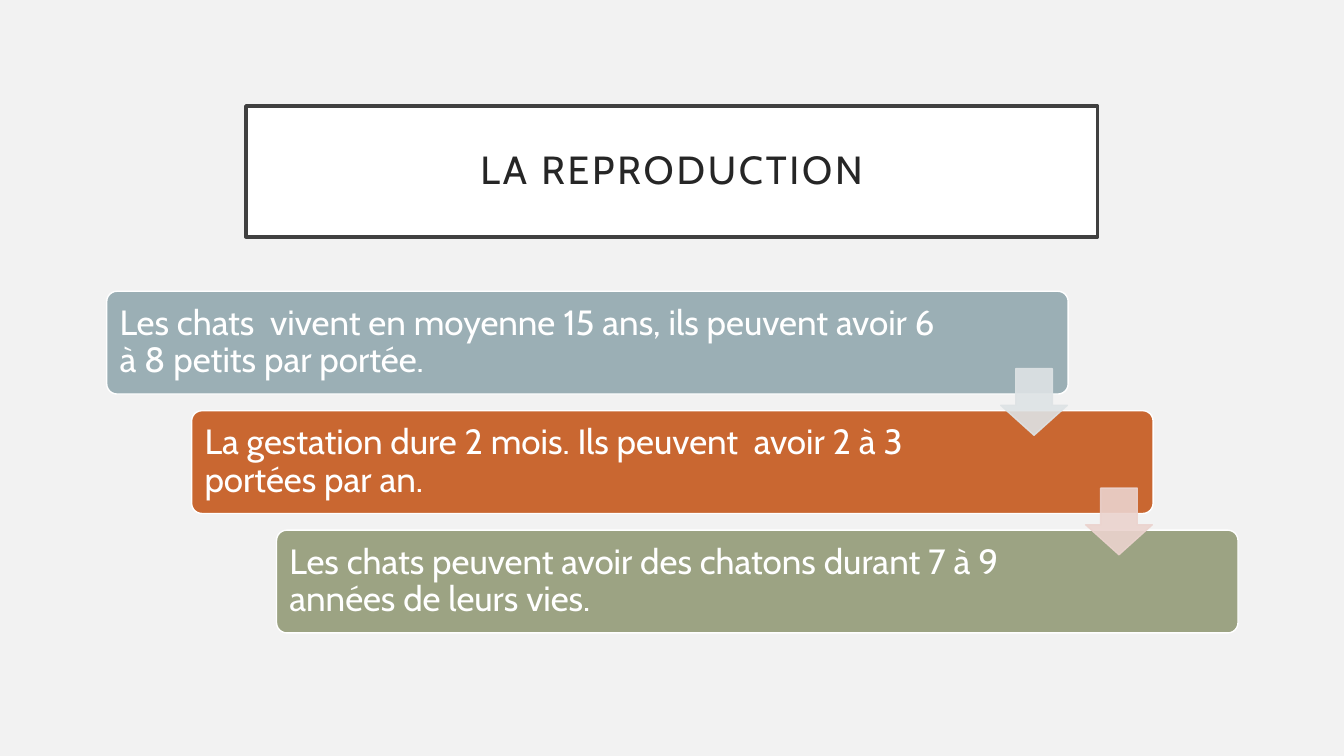
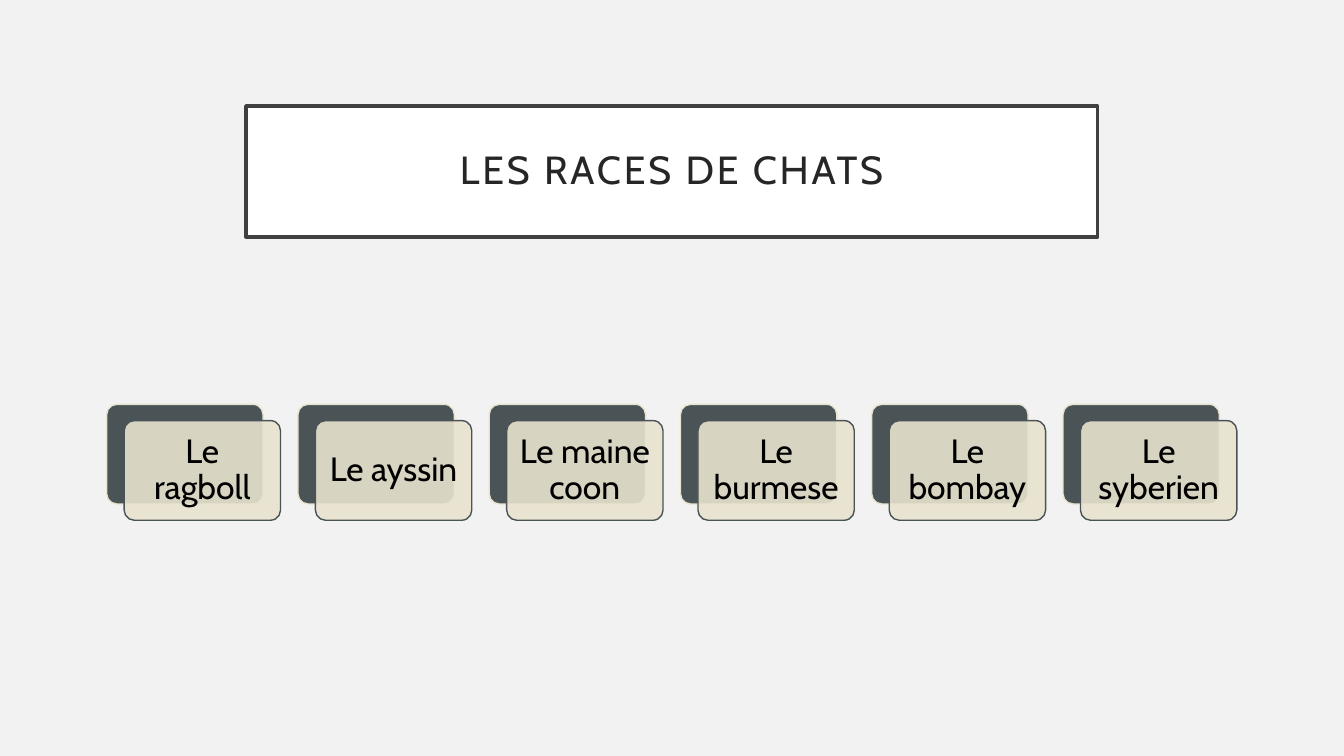
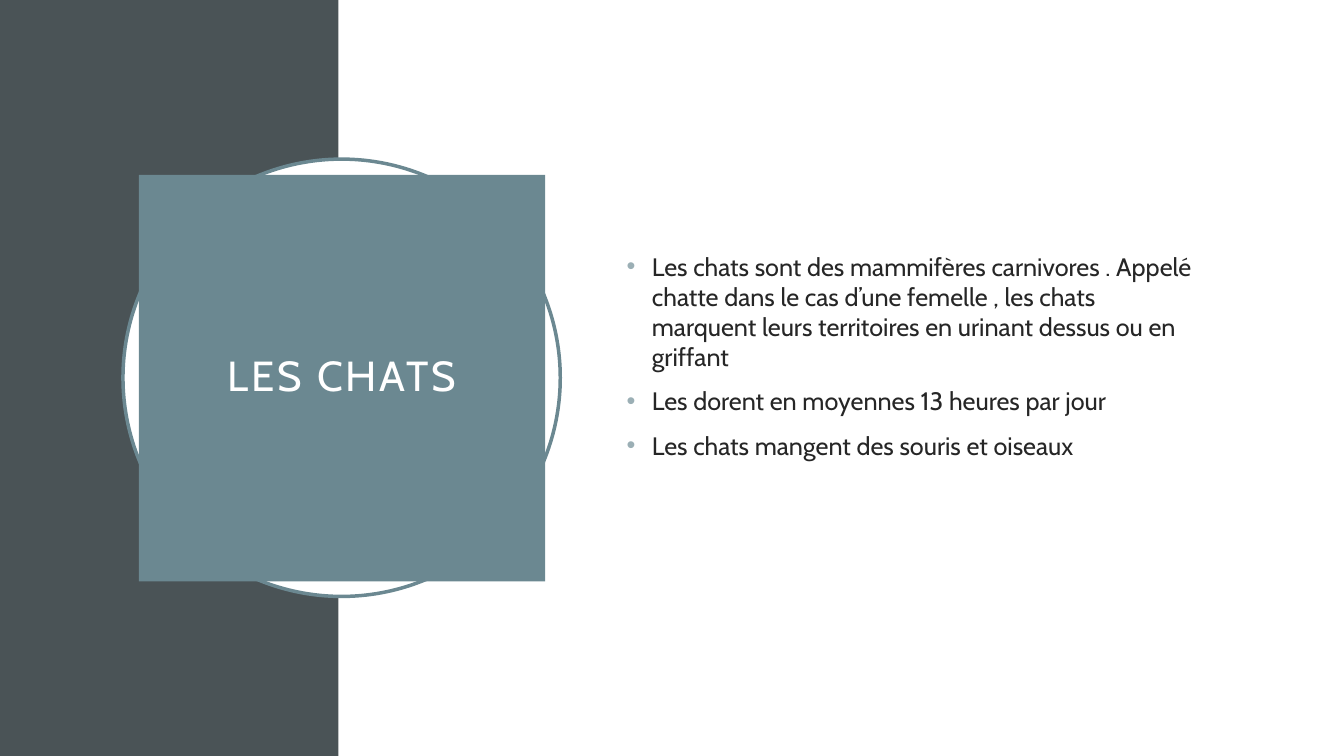
from lxml.etree import SubElement
from pptx import Presentation
from pptx.dml.color import RGBColor
from pptx.enum.shapes import MSO_SHAPE as Preset
from pptx.enum.text import MSO_ANCHOR as Anchor, PP_ALIGN as Align
from pptx.oxml.ns import qn
from pptx.util import Cm, Pt

WHITE = RGBColor(0xFF, 0xFF, 0xFF)
BLACK = RGBColor(0x00, 0x00, 0x00)
PALE_GREY = RGBColor(0xF2, 0xF2, 0xF2)
FRAME_GREY = RGBColor(0x40, 0x40, 0x40)
INK = RGBColor(0x26, 0x26, 0x26)
SLATE = RGBColor(0x4A, 0x53, 0x56)
TEAL = RGBColor(0x6B, 0x88, 0x91)
MIST = RGBColor(0x9B, 0xAF, 0xB5)
RUST = RGBColor(0xC9, 0x67, 0x31)
SAGE = RGBColor(0x9C, 0xA3, 0x83)
CREAM = RGBColor(0xE8, 0xE3, 0xCE)
PALE_MIST = RGBColor(0xDE, 0xE3, 0xE5)
PALE_RUST = RGBColor(0xEB, 0xD3, 0xCE)

FONT = "Cabin"
WIDTH, HEIGHT = 33.87, 19.05


def write(shape, *texts, size, colour, align=Align.LEFT, insets=(0.25,) * 4,
          line_spacing=0.9, space_before=0, tracking=0, bullet=None):
    frame = shape.text_frame
    frame.word_wrap = True
    frame.vertical_anchor = Anchor.MIDDLE
    (frame.margin_left, frame.margin_top,
     frame.margin_right, frame.margin_bottom) = map(Cm, insets)
    for index, text in enumerate(texts):
        para = frame.add_paragraph() if index else frame.paragraphs[0]
        para.alignment = align
        para.line_spacing = line_spacing
        para.space_before = Pt(space_before)
        span = para.add_run()
        span.text = text
        span.font.name = FONT
        span.font.size = Pt(size)
        span.font.color.rgb = colour
        if tracking:
            span._r.get_or_add_rPr().set("spc", str(tracking * 100))
        if bullet:
            add_bullet(para, bullet)


def add_bullet(para, colour):
    properties = para._p.get_or_add_pPr()
    properties.set("marL", str(Cm(0.64)))
    properties.set("indent", str(-Cm(0.64)))
    paint = SubElement(properties, qn("a:buClr"))
    SubElement(paint, qn("a:srgbClr")).set("val", str(colour))
    SubElement(properties, qn("a:buFont")).set("typeface", "Arial")
    SubElement(properties, qn("a:buChar")).set("char", "•")


def set_alpha(shape, route, percent):
    for colour in shape._element.spPr.findall("/".join(map(qn, route))):
        SubElement(colour, qn("a:alpha")).set("val", str(percent * 1000))


class SlideBuilder:
    def __init__(self):
        self.deck = Presentation()
        self.deck.slide_width = Cm(WIDTH)
        self.deck.slide_height = Cm(HEIGHT)
        self.page = None

    def new_page(self, background):
        self.page = self.deck.slides.add_slide(self.deck.slide_layouts[6])
        self.page.background.fill.solid()
        self.page.background.fill.fore_color.rgb = background

    def shape(self, preset, left, top, width, height, fill, line=None,
              line_width=1.0, adjustments=(), alpha=None, line_alpha=None):
        shape = self.page.shapes.add_shape(
            preset, Cm(left), Cm(top), Cm(width), Cm(height))
        shape.shadow.inherit = False
        for index, value in enumerate(adjustments):
            shape.adjustments[index] = value
        shape.fill.solid()
        shape.fill.fore_color.rgb = fill
        if line is None:
            shape.line.fill.background()
        else:
            shape.line.color.rgb = line
            shape.line.width = Pt(line_width)
        if alpha:
            set_alpha(shape, ("a:solidFill", "a:srgbClr"), alpha)
        if line_alpha:
            set_alpha(shape, ("a:ln", "a:solidFill", "a:srgbClr"), line_alpha)
        return shape

    def rounded(self, left, top, width, height, fill, line, **style):
        return self.shape(Preset.ROUNDED_RECTANGLE, left, top, width, height,
                          fill, line, adjustments=(0.1,), **style)

    def arrow(self, left, top, colour):
        self.shape(Preset.DOWN_ARROW, left, top, 1.68, 1.68, colour, colour,
                   adjustments=(0.55, 0.45), alpha=90, line_alpha=90)

    def title(self, text, left=6.2, top=2.67, width=21.46, height=3.3,
              fill=WHITE, line=FRAME_GREY, size=28, colour=INK):
        box = self.shape(Preset.RECTANGLE, left, top, width, height,
                         fill, line, line_width=2.5)
        write(box, text, size=size, colour=colour, align=Align.CENTER,
              insets=(0.51,) * 4, tracking=2)

    def bullets(self, left, top, width, height, texts):
        box = self.page.shapes.add_textbox(
            Cm(left), Cm(top), Cm(width), Cm(height))
        write(box, *texts, size=18, colour=INK, insets=(0.25, 0.13, 0.25, 1.24),
              line_spacing=1.0, space_before=10, bullet=MIST)


def build_reproduction(builder):
    builder.new_page(PALE_GREY)
    builder.title("LA REPRODUCTION")
    step_x, step_y = 2.14, 3.01
    steps = (
        ("Les chats  vivent en moyenne 15 ans, ils peuvent avoir 6 à 8 petits par portée.", MIST, 2.9),
        ("La gestation dure 2 mois. Ils peuvent  avoir 2 à 3 portées par an.", RUST, 4.09),
        ("Les chats peuvent avoir des chatons durant 7 à 9 années de leurs vies.", SAGE, 4.09),
    )
    for index, (text, fill, right_inset) in enumerate(steps):
        box = builder.rounded(2.69 + index * step_x, 7.34 + index * step_y,
                              24.23, 2.59, fill, WHITE)
        write(box, text, size=25, colour=WHITE,
              insets=(0.25, 0.25, right_inset, 0.25))
    for index, colour in enumerate((PALE_MIST, PALE_RUST)):
        builder.arrow(25.22 + index * step_x, 9.29 + index * step_y, colour)


def build_breeds(builder):
    builder.new_page(PALE_GREY)
    builder.title("LES RACES DE CHATS")
    breeds = ("Le ragboll", "Le ayssin", "Le maine coon",
              "Le burmese", "Le bombay", "Le syberien")
    width, height, pitch, top = 3.94, 2.51, 4.82, 10.19
    for index, breed in enumerate(breeds):
        left = 2.69 + index * pitch
        builder.rounded(left, top, width, height, SLATE, CREAM)
        card = builder.rounded(left + 0.44, top + 0.41, width, height,
                               CREAM, SLATE, alpha=90)
        write(card, breed, size=24, colour=BLACK, align=Align.CENTER,
              insets=(0.22,) * 4)


def build_cats(builder):
    builder.new_page(WHITE)
    builder.shape(Preset.RECTANGLE, 0, 0, 8.53, HEIGHT, SLATE)
    builder.shape(Preset.OVAL, 3.1, 4.01, 11.02, 11.02, WHITE, TEAL,
                  line_width=2.5)
    builder.title("LES CHATS", 3.5, 4.41, 10.24, 10.24, fill=TEAL, line=None,
                  size=30, colour=WHITE)
    builder.bullets(15.54, 3.89, 14.78, 11.25, (
        "Les chats sont des mammifères carnivores . Appelé chatte dans le cas "
        "d’une femelle , les chats marquent leurs territoires en urinant "
        "dessus ou en griffant",
        "Les dorent en moyennes 13 heures par jour",
        "Les chats mangent des souris et oiseaux",
    ))


def main():
    builder = SlideBuilder()
    build_reproduction(builder)
    build_breeds(builder)
    build_cats(builder)
    builder.deck.save("out.pptx")


if __name__ == "__main__":
    main()
